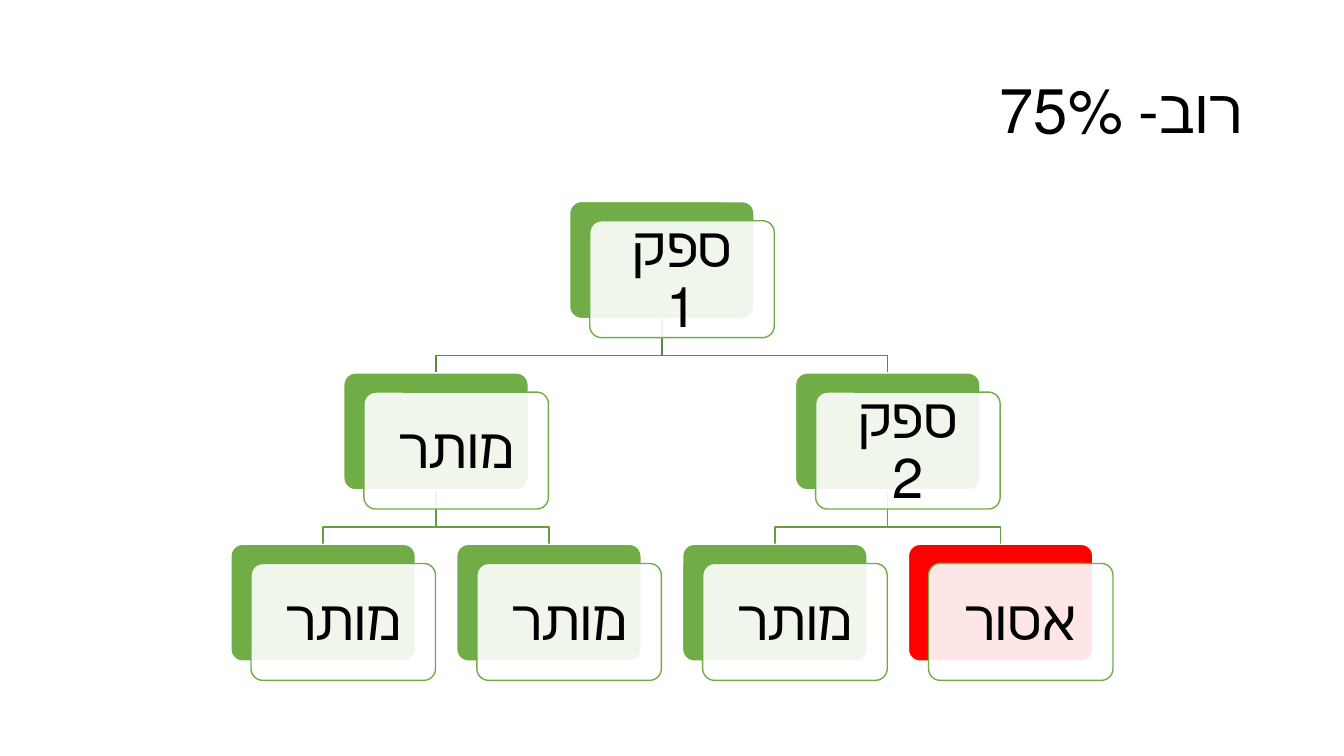
from dataclasses import dataclass
from typing import Optional

from lxml import etree
from pptx import Presentation
from pptx.dml.color import RGBColor
from pptx.enum import lang, shapes, text
from pptx.oxml import ns
from pptx.util import Inches, Pt

GREEN, RED, WHITE, BLACK = "70AD47", "FF0000", "FFFFFF", "000000"
LEFT, TOP = 2.29, 2.0
COLUMN_STEP, LEVEL_STEP = 2.24, 1.7
WIDTH, HEIGHT = 1.83, 1.16
CARD_SHIFT_X, CARD_SHIFT_Y = 0.2, 0.19
LINK_BEND = 0.37
LINK_COLORS = {1: "5A8B39", 2: "669D40"}


@dataclass(frozen=True)
class Node:
    label: str
    column: float
    level: int
    parent: Optional["Node"] = None
    color: str = GREEN

    @property
    def left(self) -> float:
        return LEFT + self.column * COLUMN_STEP

    @property
    def top(self) -> float:
        return TOP + self.level * LEVEL_STEP

    @property
    def center(self) -> float:
        return self.left + WIDTH / 2


ROOT = Node("ספק 1", 1.5, 0)
ALLOWED = Node("מותר", 0.5, 1, ROOT)
SECOND_DOUBT = Node("ספק 2", 2.5, 1, ROOT)
NODES = [
    ROOT,
    ALLOWED,
    Node("מותר", 0, 2, ALLOWED),
    Node("מותר", 1, 2, ALLOWED),
    SECOND_DOUBT,
    Node("מותר", 2, 2, SECOND_DOUBT),
    Node("אסור", 3, 2, SECOND_DOUBT, RED),
]


def rgb(value: str) -> RGBColor:
    return RGBColor.from_string(value)


def write_hebrew(shape, label: str, size: int, alignment) -> None:
    """Fill the shape with one right-to-left paragraph."""
    frame = shape.text_frame
    frame.text = label
    frame.word_wrap = True
    frame.vertical_anchor = text.MSO_ANCHOR.MIDDLE
    paragraph = frame.paragraphs[0]
    paragraph.alignment = alignment
    paragraph.line_spacing = 0.9
    paragraph._p.get_or_add_pPr().set("rtl", "1")
    font = paragraph.runs[0].font
    font.name = "Calibri"
    font.size = Pt(size)
    font.color.rgb = rgb(BLACK)
    font.language_id = lang.MSO_LANGUAGE_ID.HEBREW


def add_link(slide, node: Node) -> None:
    start = node.parent.top + HEIGHT
    bend = start + LINK_BEND
    points = [(node.parent.center, bend), (node.center, bend), (node.center, node.top)]
    builder = slide.shapes.build_freeform(Inches(node.parent.center), Inches(start))
    builder.add_line_segments([(Inches(x), Inches(y)) for x, y in points], close=False)
    link = builder.convert_to_shape()
    link.shadow.inherit = False
    link.fill.background()
    link.line.color.rgb = rgb(LINK_COLORS[node.level])
    link.line.width = Pt(1)


def add_rounded(slide, left: float, top: float, fill: str, line: str):
    shape = slide.shapes.add_shape(
        shapes.MSO_SHAPE.ROUNDED_RECTANGLE,
        Inches(left), Inches(top), Inches(WIDTH), Inches(HEIGHT),
    )
    shape.adjustments[0] = 0.1
    shape.shadow.inherit = False
    shape.fill.solid()
    shape.fill.fore_color.rgb = rgb(fill)
    shape.line.color.rgb = rgb(line)
    shape.line.width = Pt(1)
    return shape


def set_opacity(shape, percent: int) -> None:
    color = shape._element.spPr.find(ns.qn("a:solidFill")).find(ns.qn("a:srgbClr"))
    etree.SubElement(color, ns.qn("a:alpha")).set("val", str(percent * 1000))


def add_node(slide, node: Node) -> None:
    add_rounded(slide, node.left, node.top, node.color, WHITE)
    card = add_rounded(
        slide, node.left + CARD_SHIFT_X, node.top + CARD_SHIFT_Y, WHITE, GREEN
    )
    set_opacity(card, 90)
    frame = card.text_frame
    frame.margin_left = frame.margin_right = Inches(0.17)
    frame.margin_top = frame.margin_bottom = Inches(0.17)
    write_hebrew(card, node.label, 40, text.PP_ALIGN.CENTER)


def main() -> None:
    presentation = Presentation()
    presentation.slide_width = Inches(13.33)
    presentation.slide_height = Inches(7.5)
    slide = presentation.slides.add_slide(presentation.slide_layouts[5])

    title = slide.shapes.title
    title.left, title.top = Inches(0.92), Inches(0.4)
    title.width, title.height = Inches(11.5), Inches(1.45)
    write_hebrew(title, "רוב- 75%", 44, text.PP_ALIGN.RIGHT)

    for node in NODES:
        if node.parent:
            add_link(slide, node)
    for node in NODES:
        add_node(slide, node)

    presentation.save("out.pptx")


if __name__ == "__main__":
    main()
